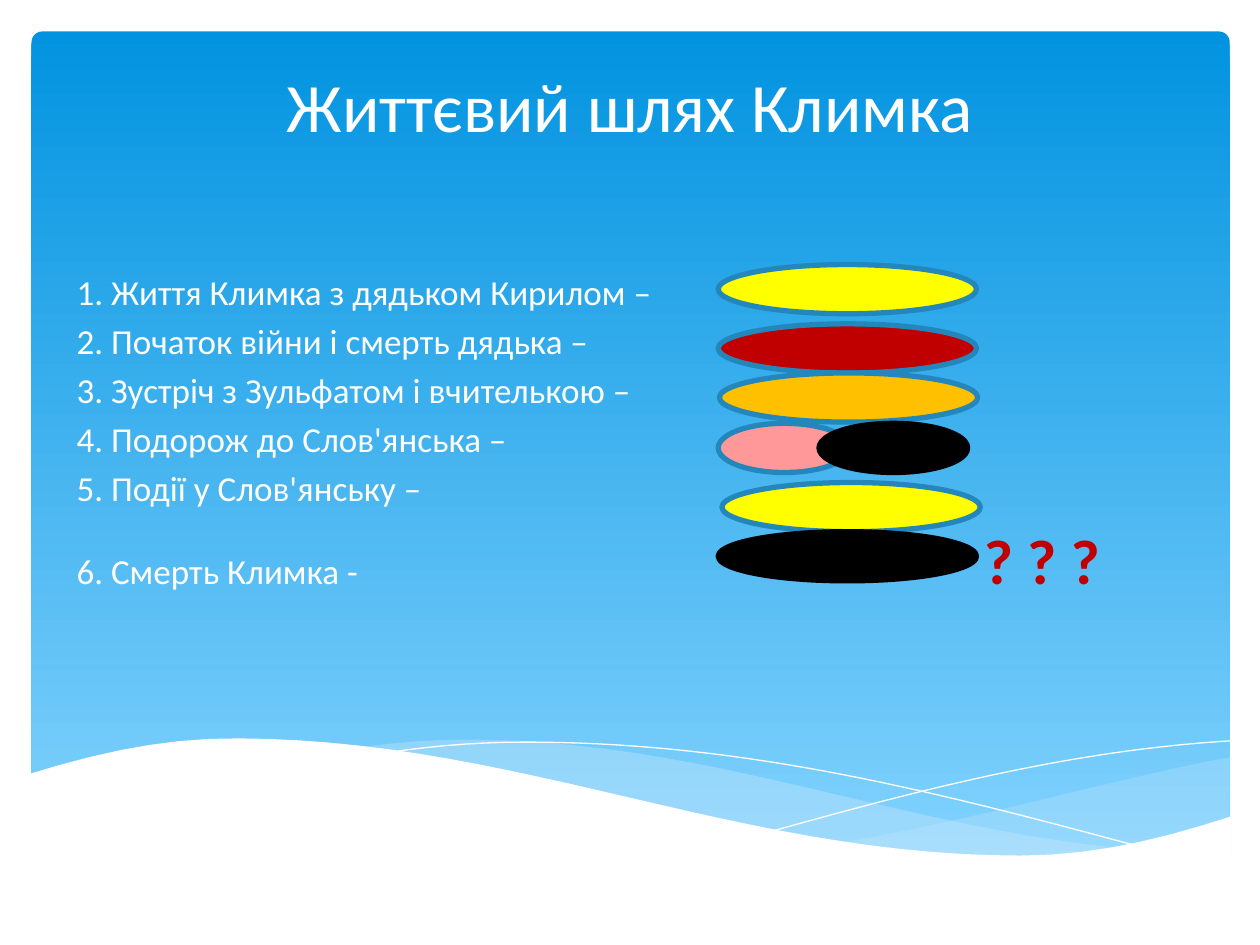
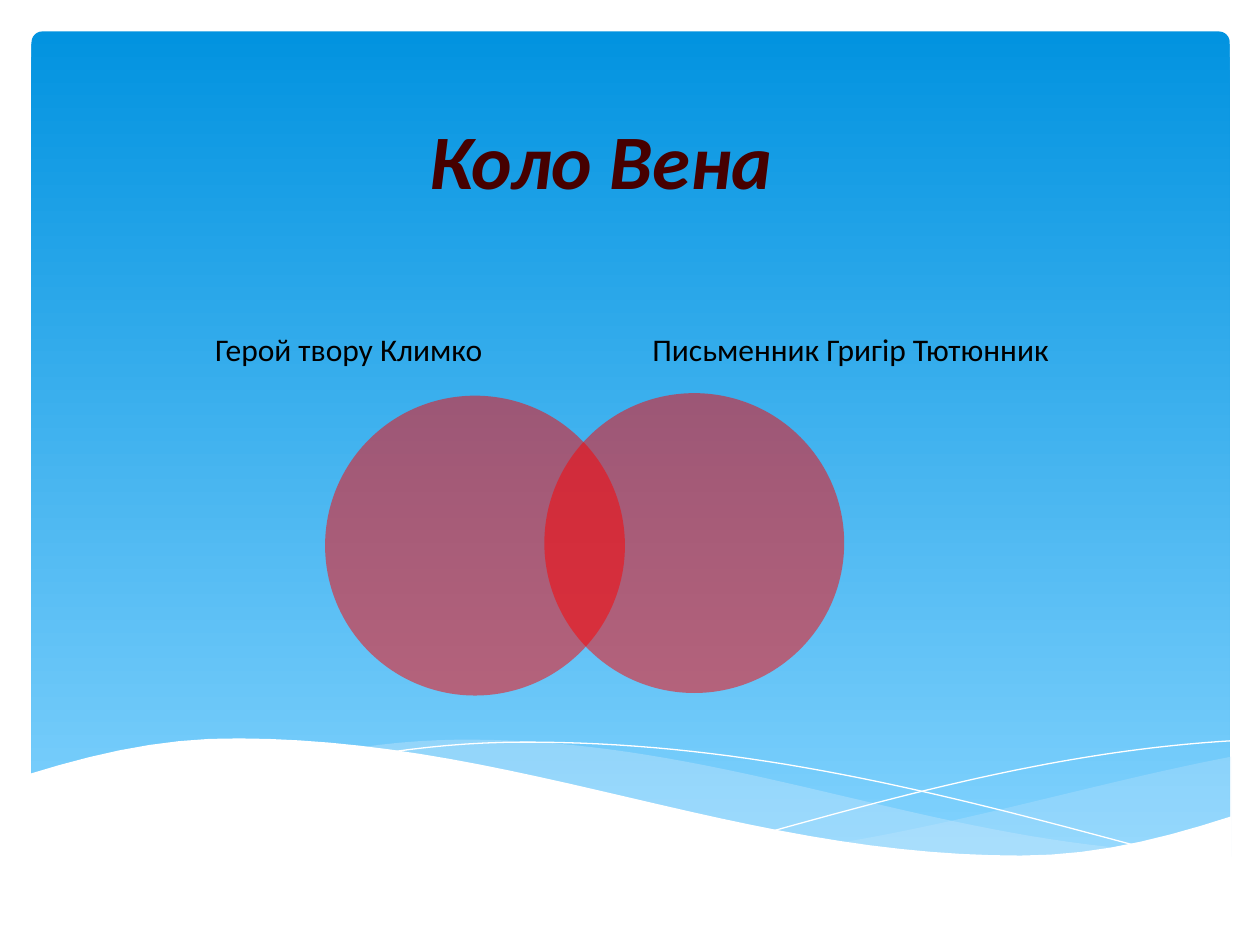
"""Build two slides on the life of Klymko, with a shared sky and wave frame."""
from dataclasses import dataclass
from itertools import pairwise
from math import cos, pi
from typing import Any, NamedTuple

from lxml import etree
from pptx import Presentation
from pptx import util as u
from pptx.dml import color
from pptx.enum import shapes, text
from pptx.oxml import ns

FONT = "Calibri"
WHITE, BLACK, RED, MAROON = "FFFFFF", "000000", "C00000", "460000"
YELLOW, AMBER, PINK, SCARLET = "FFFF00", "FFC000", "FF9999", "FF0000"
EDGE, MIST = "2487BB", "C6E7FC"
SKY = ("0293E0", "83D3FE")
STEPS = 40
LEFT, RIGHT = 0.23, 9.77


class Box(NamedTuple):
    left: float
    top: float
    width: float
    height: float

    def size(self) -> list[u.Length]:
        return [u.Inches(side) for side in self]


class Turn(NamedTuple):
    x: float
    y: float


@dataclass
class Wave:
    """A cosine curve through its turns, filled down to a floor if it has one."""
    turns: tuple[Turn, ...]
    start: float
    end: float
    floor: float | None = None
    fill: str | None = None
    alpha: int = 100

    def level(self, x: float) -> float:
        a, b = next((a, b) for a, b in pairwise(self.turns) if x <= b.x)
        share = (1 - cos(pi * (x - a.x) / (b.x - a.x))) / 2
        return a.y + (b.y - a.y) * share

    def points(self) -> list[Turn]:
        step = (self.end - self.start) / STEPS
        spots = [self.start + step * num for num in range(STEPS)] + [self.end]
        curve = [Turn(x, self.level(x)) for x in spots]
        if self.floor is not None:
            curve += [Turn(self.end, self.floor), Turn(self.start, self.floor)]
        return curve


@dataclass
class Oval:
    box: Box
    fill: str
    line: str | None = EDGE
    alpha: int = 100


WAVES = [
    Wave((Turn(5.05, 6.83), Turn(11.75, 5.8)), 6.62, RIGHT, 6.8, MIST, 29),
    Wave((Turn(-1.3, 6.77), Turn(3.7, 5.87), Turn(9.7, 6.77)),
         2.87, 8.94, 6.8, MIST, 40),
    Wave((Turn(-3.5, 7.57), Turn(4.17, 5.89), Turn(14, 7.57)), 3.1, 9.08),
    Wave((Turn(1.4, 7.46), Turn(10.4, 5.86)), 6.14, 9.76),
    Wave((Turn(-2.5, 6.79), Turn(1.85, 5.86), Turn(8.1, 6.79), Turn(12.36, 5.86)),
         LEFT, RIGHT, 7.31, WHITE),
]

STAGES = [
    "1. Життя Климка з дядьком Кирилом –",
    "2. Початок війни і смерть дядька –",
    "3. Зустріч з Зульфатом і вчителькою –",
    "4. Подорож до Слов'янська –",
    "5. Події у Слов'янську –",
    "6. Смерть Климка -\t",
]
WIDE, TALL = 2.05, 0.39
MOODS = [
    Oval(Box(5.7, 2.1, WIDE, TALL), YELLOW),
    Oval(Box(5.7, 2.57, WIDE, TALL), RED),
    Oval(Box(5.71, 2.96, WIDE, TALL), AMBER),
    Oval(Box(5.7, 3.36, 1.05, TALL), PINK),
    Oval(Box(5.73, 3.83, WIDE, TALL), YELLOW),
    Oval(Box(5.7, 4.22, WIDE, TALL), BLACK, BLACK),
    Oval(Box(6.5, 3.36, 1.18, TALL), BLACK, BLACK),
]
RING = 2.38
VENN = [Oval(Box(left, top, RING, RING), SCARLET, None, 50)
        for left, top in ((2.58, 3.14), (4.32, 3.12))]
NAMES = {
    "Герой твору Климко": Box(1.61, 2.57, 2.51, 0.4),
    "Письменник Григір Тютюнник": Box(5.08, 2.57, 3.53, 0.4),
}


def rgb(code: str) -> color.RGBColor:
    return color.RGBColor.from_string(code)


def paint(shape: Any, fill: str | None, line: str | None = None,
          width: float = 3, alpha: int = 100) -> None:
    shape.shadow.inherit = False
    if fill:
        shape.fill.solid()
        shape.fill.fore_color.rgb = rgb(fill)
        if alpha < 100:
            tone = shape.element.spPr.find(".//" + ns.qn("a:srgbClr"))
            etree.SubElement(tone, ns.qn("a:alpha"), val=str(alpha * 1000))
    else:
        shape.fill.background()
    if line:
        shape.line.color.rgb = rgb(line)
        shape.line.width = u.Pt(width)
    else:
        shape.line.fill.background()


def write(para: Any, words: str, *, size: float = 18, ink: str = BLACK,
          bold: bool = False, slant: bool = False, gap: float = 0) -> None:
    run = para.add_run()
    run.text = words
    font = run.font
    font.name, font.size = FONT, u.Pt(size)
    font.bold, font.italic = bold, slant
    font.color.rgb = rgb(ink)
    para.space_before = u.Pt(gap)


def label(slide: Any, box: Box, wrap: bool = False) -> Any:
    body = slide.shapes.add_textbox(*box.size()).text_frame
    body.word_wrap = wrap
    return body


def head(slide: Any, words: str, box: Box, anchor: text.MSO_ANCHOR,
         inset: float, **style: Any) -> None:
    title = slide.shapes.title
    title.left, title.top, title.width, title.height = box.size()
    body = title.text_frame
    body.auto_size = text.MSO_AUTO_SIZE.NONE
    body.vertical_anchor = anchor
    body.margin_top = body.margin_bottom = u.Inches(inset)
    para = body.paragraphs[0]
    para.alignment = text.PP_ALIGN.CENTER
    write(para, words, **style)


def oval(slide: Any, item: Oval) -> None:
    shape = slide.shapes.add_shape(shapes.MSO_SHAPE.OVAL, *item.box.size())
    paint(shape, item.fill, item.line, alpha=item.alpha)


def sky(slide: Any) -> Any:
    panel = slide.shapes.add_shape(
        shapes.MSO_SHAPE.ROUNDED_RECTANGLE, *Box(0.25, 0.25, 9.51, 6.6).size())
    panel.adjustments[0] = 0.013
    paint(panel, None)
    panel.fill.gradient()
    panel.fill.gradient_angle = 270
    for stop, tone, spot in zip(panel.fill.gradient_stops, SKY, (0, 1)):
        stop.color.rgb = rgb(tone)
        stop.position = spot
    return panel


def ripple(slide: Any, wave: Wave) -> Any:
    first, *rest = [(u.Inches(x), u.Inches(y)) for x, y in wave.points()]
    pen = slide.shapes.build_freeform(*first)
    pen.add_line_segments(rest, close=wave.floor is not None)
    shape = pen.convert_to_shape()
    paint(shape, wave.fill, None if wave.fill else WHITE, 0, wave.alpha)
    return shape


def frame(slide: Any) -> None:
    """Draw the sky and waves and move them to the layout, for every slide."""
    art = [sky(slide)] + [ripple(slide, wave) for wave in WAVES]
    for num, shape in enumerate(art, 100):
        shape.element.nvSpPr.cNvPr.set("id", str(num))
        slide.slide_layout.shapes.element.append(shape.element)


def life(slide: Any) -> None:
    head(slide, "Життєвий шлях Климка", Box(0.75, 0.36, 8.5, 1.5),
         text.MSO_ANCHOR.TOP, 0.14, size=39.6, ink=WHITE)
    body = label(slide, Box(0.51, 2.1, 8.43, 3.4), wrap=True)
    for num, stage in enumerate(STAGES):
        para = body.add_paragraph() if num else body.paragraphs[0]
        write(para, stage, size=20, ink=WHITE, gap=4 if num else 0)
    write(para, "? ? ?", size=36, ink=RED, bold=True, gap=7.5)
    tabs = etree.SubElement(para._p.get_or_add_pPr(), ns.qn("a:tabLst"))
    etree.SubElement(tabs, ns.qn("a:tab"), pos=str(u.Inches(7.2)), algn="l")
    for mood in MOODS:
        oval(slide, mood)


def venn(slide: Any) -> None:
    head(slide, "Коло Вена ", Box(0.59, 0.6, 8.5, 1.08),
         text.MSO_ANCHOR.BOTTOM, 0.05, size=44, ink=MAROON, bold=True, slant=True)
    for ring in VENN:
        oval(slide, ring)
    for words, box in NAMES.items():
        write(label(slide, box).paragraphs[0], words)


def main() -> None:
    deck = Presentation()
    deck.slide_width, deck.slide_height = u.Inches(10), u.Inches(7.5)
    plain = deck.slide_layouts[5]
    first, second = [deck.slides.add_slide(plain) for _ in range(2)]
    frame(first)
    life(first)
    venn(second)
    deck.save("out.pptx")


if __name__ == "__main__":
    main()
